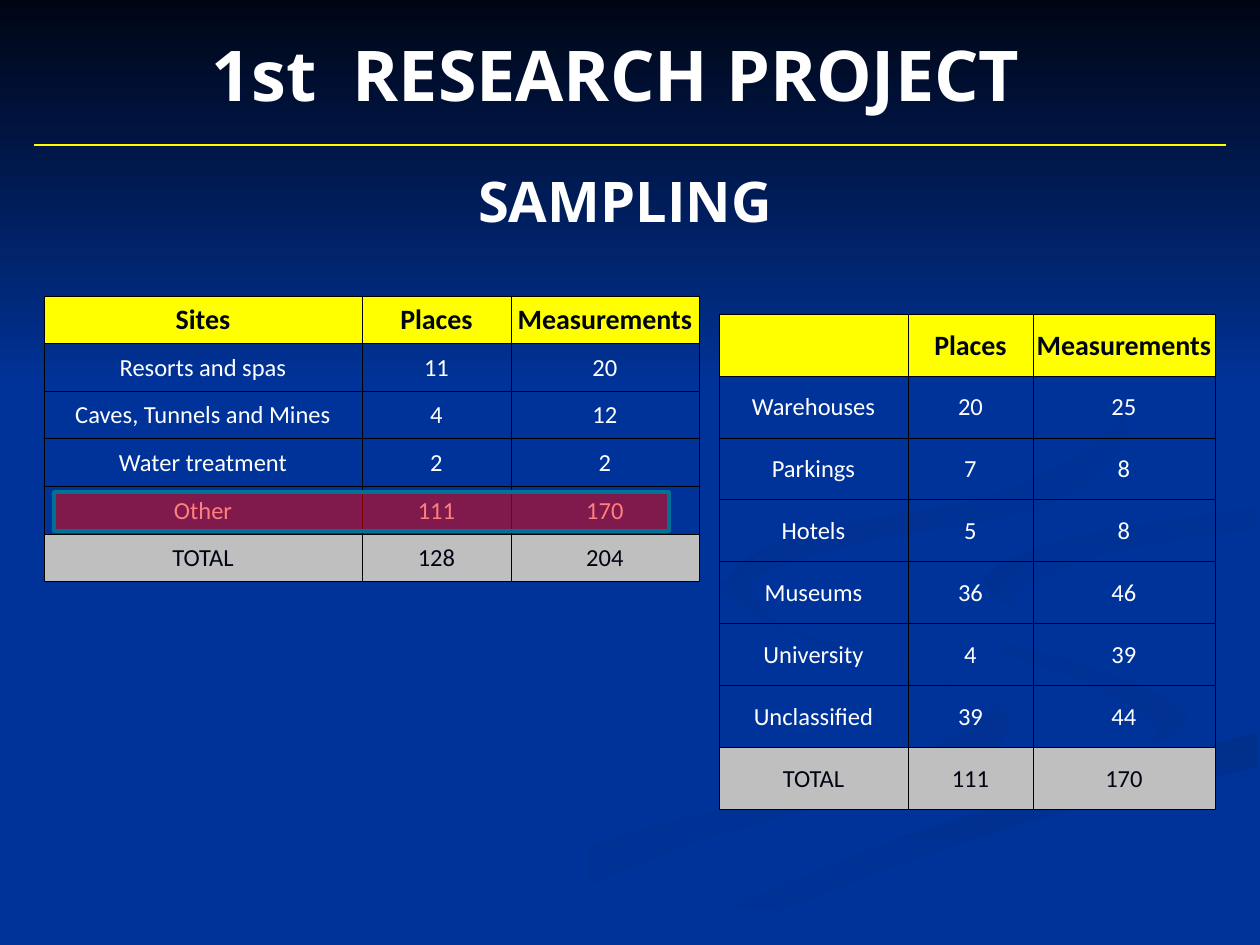
from lxml import etree
from pptx import Presentation
from pptx import util as u
from pptx.dml.color import RGBColor
from pptx.enum import shapes, text
from pptx.oxml.ns import qn

PX = 914400 / 126
STEPS = 6
COLORS = {
    "blue": "003399", "navy": "000514", "yellow": "FFFF00", "white": "FFFFFF",
    "black": "000000", "gray": "BFBFBF", "red": "FF0000", "teal": "007197",
    "shade_a": "003193", "shade_b": "002F8C", "shade_c": "003091", "shade_d": "002F8E",
}

# Each ribbon: start colour, end colour, clockwise angle, curved edges in px
RIBBONS = [
    ("blue", "shade_a", 0, [
        [(724, 578), (748, 611), (859, 654), (984, 697), (1007, 730), (953, 774),
         (711, 838), (455, 944)],
        [(378, 944), (577, 849), (862, 772), (990, 713), (934, 679), (795, 636),
         (718, 590)]]),
    ("blue", "shade_a", 45, [
        [(912, 585), (955, 627), (1096, 668), (1188, 718), (1126, 762)],
        [(1126, 762), (1156, 726), (1076, 679), (951, 636), (912, 590)]]),
    ("shade_b", "blue", 90, [
        [(634, 944), (794, 873), (1047, 792), (1257, 732)],
        [(1257, 767), (1034, 820), (818, 895), (719, 944)]]),
    ("blue", "blue", 0, [
        [(601, 944), (780, 862), (1062, 779), (1188, 720), (1120, 672), (956, 627),
         (913, 585), (970, 538), (1259, 488)],
        [(1259, 507), (1036, 547), (984, 583), (1048, 627), (1259, 678)],
        [(1259, 732), (964, 815), (634, 944)]]),
    ("shade_c", "blue", 45, [
        [(1257, 507), (1070, 538), (984, 580), (1041, 625)],
        [(1041, 625), (1014, 595), (1106, 553), (1257, 529)]]),
    ("shade_d", "blue", 45, [
        [(960, 294), (1062, 347), (1126, 433), (1040, 507), (861, 542), (751, 581),
         (784, 630)],
        [(784, 630), (727, 582), (802, 533), (997, 494), (1119, 420), (1077, 359),
         (960, 294)]]),
]

SITES = [
    ("Sites", "Places", "Measurements"),
    ("Resorts and spas", "11", "20"),
    ("Caves, Tunnels and Mines", "4", "12"),
    ("Water treatment", "2", "2"),
    ("Other", "111", "170"),
    ("TOTAL", "128", "204"),
]
OTHER_SITES = [
    ("", "Places", "Measurements"),
    ("Warehouses", "20", "25"),
    ("Parkings", "7", "8"),
    ("Hotels", "5", "8"),
    ("Museums", "36", "46"),
    ("University", "4", "39"),
    ("Unclassified", "39", "44"),
    ("TOTAL", "111", "170"),
]


def px(length):
    return u.Emu(round(length * PX))


def rgb(name):
    return RGBColor.from_string(COLORS[name])


def set_attributes(target, values):
    for name, value in values.items():
        setattr(target, name, value)


def write(paragraph, wording, color, **font):
    paragraph.alignment = text.PP_ALIGN.CENTER
    run = paragraph.add_run()
    run.text = wording
    set_attributes(run.font, font)
    run.font.color.rgb = rgb(color)


def curve(anchors):
    """Points of a Catmull-Rom curve through the anchors."""
    padded = [anchors[0], *anchors, anchors[-1]]
    points = [anchors[0]]
    for section in zip(padded, padded[1:], padded[2:], padded[3:]):
        for step in range(1, STEPS + 1):
            t = step / STEPS
            points.append(tuple(
                b + t * (c - a + t * (2 * a - 5 * b + 4 * c - d
                                      + t * (3 * b - a - 3 * c + d))) / 2
                for a, b, c, d in zip(*section)))
    return points


def fill_gradient(shape, start, end, angle):
    shape.shadow.inherit = False
    shape.line.fill.background()
    shape.fill.gradient()
    shape.fill.gradient_angle = (360 - angle) % 360
    for stop, color in zip(shape.fill.gradient_stops, (start, end)):
        stop.color.rgb = rgb(color)


def add_ribbon(slide, start, end, angle, edges):
    outline = [point for edge in edges for point in curve(edge)]
    builder = slide.shapes.build_freeform(*outline[0], scale=PX)
    builder.add_line_segments(outline[1:], close=True)
    fill_gradient(builder.convert_to_shape(), start, end, angle)


def add_rectangle(slide, box):
    return slide.shapes.add_shape(shapes.MSO_SHAPE.RECTANGLE, *map(px, box))


def add_rule(slide, left, right, y):
    rule = slide.shapes.add_connector(
        shapes.MSO_CONNECTOR.STRAIGHT, px(left), px(y), px(right), px(y))
    rule.line.color.rgb = rgb("yellow")
    rule.line.width = u.Pt(1.5)
    etree.SubElement(rule._element.spPr, qn("a:effectLst"))


def add_heading(slide, box, wording, size):
    frame = slide.shapes.add_textbox(*map(px, box)).text_frame
    set_attributes(frame, {
        "word_wrap": True, "vertical_anchor": text.MSO_ANCHOR.BOTTOM,
        "margin_left": px(6), "margin_right": px(6), "margin_top": 0, "margin_bottom": 0})
    write(frame.paragraphs[0], wording, "white",
          name="Open Sans", size=u.Pt(size), bold=True)


def add_borders(cell):
    properties = cell._tc.get_or_add_tcPr()
    for side in ("lnL", "lnR", "lnT", "lnB"):
        border = etree.SubElement(properties, qn(f"a:{side}"), w=str(u.Pt(0.5)))
        fill = etree.SubElement(border, qn("a:solidFill"))
        etree.SubElement(fill, qn("a:srgbClr"), val=COLORS["black"])


def add_count_table(slide, left, top, widths, height, rows):
    """Table with a yellow header, see-through body rows and a gray total row."""
    table = slide.shapes.add_table(
        len(rows), len(widths), px(left), px(top), px(sum(widths)), px(height)).table
    set_attributes(table, {"first_row": False, "horz_banding": False})
    for column, width in zip(table.columns, widths):
        column.width = px(width)
    backgrounds = {0: "yellow", len(rows) - 1: "gray"}
    for r, row in enumerate(rows):
        table.rows[r].height = px(height / len(rows))
        background = backgrounds.get(r)
        for c, wording in enumerate(row):
            cell = table.cell(r, c)
            set_attributes(cell, {
                "vertical_anchor": text.MSO_ANCHOR.MIDDLE, "margin_left": px(1),
                "margin_right": px(1), "margin_top": px(1), "margin_bottom": 0})
            add_borders(cell)
            if background:
                cell.fill.solid()
                cell.fill.fore_color.rgb = rgb(background)
            else:
                cell.fill.background()
            if wording:
                write(cell.text_frame.paragraphs[0], wording,
                      "navy" if background else "white", name="Calibri",
                      size=u.Pt(16 if r == 0 else 14), bold=r == 0)


def add_highlight(slide, box):
    highlight = add_rectangle(slide, box)
    highlight.shadow.inherit = False
    highlight.fill.solid()
    highlight.fill.fore_color.rgb = rgb("red")
    color = highlight._element.spPr.find(qn("a:solidFill"))[0]
    etree.SubElement(color, qn("a:alpha"), val="50000")
    highlight.line.color.rgb = rgb("teal")
    highlight.line.width = u.Pt(2)


def main():
    deck = Presentation()
    set_attributes(deck, {"slide_width": px(1260), "slide_height": px(945)})
    slide = deck.slides.add_slide(deck.slide_layouts[6])
    slide.background.fill.solid()
    slide.background.fill.fore_color.rgb = rgb("blue")
    for ribbon in RIBBONS:
        add_ribbon(slide, *ribbon)
    fill_gradient(add_rectangle(slide, (0, 0, 1260, 388)), "navy", "blue", 90)
    add_rule(slide, 34, 1226, 145)
    add_heading(slide, (15, 6, 1201, 110), "1st  RESEARCH PROJECT", 40)
    add_count_table(slide, 44, 296, (318, 149, 188), 286, SITES)
    add_heading(slide, (263, 145, 724, 89), "SAMPLING", 32)
    add_count_table(slide, 719, 314, (189, 125, 182), 496, OTHER_SITES)
    add_highlight(slide, (54, 492, 615, 39))
    deck.save("out.pptx")


if __name__ == "__main__":
    main()
